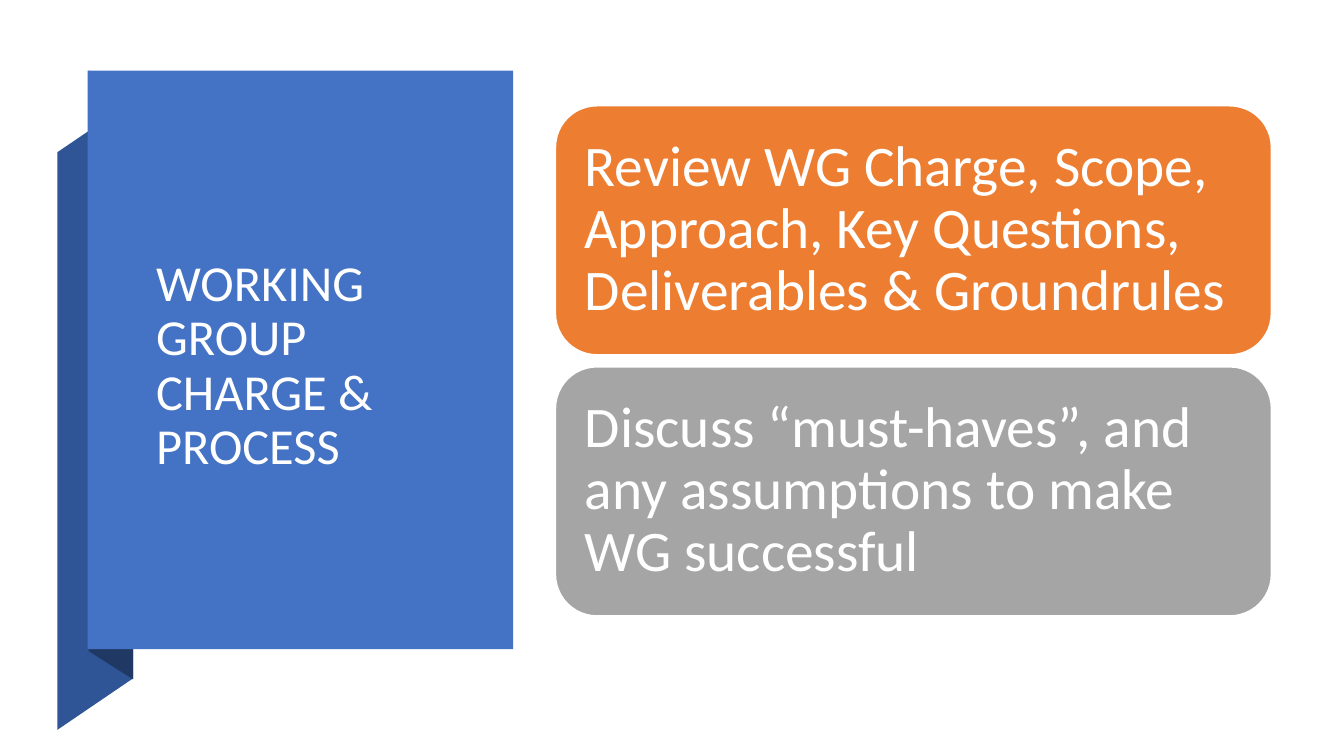
from dataclasses import dataclass

from pptx import Presentation
from pptx.dml.color import RGBColor
from pptx.enum.shapes import MSO_SHAPE as Preset
from pptx.enum.text import MSO_ANCHOR as Anchor, PP_ALIGN as Align
from pptx.util import Inches, Pt


@dataclass(frozen=True)
class Theme:
    font: str = "Calibri"
    title_size: int = 36
    card_size: int = 41
    white: str = "FFFFFF"
    panel: str = "4472C4"
    ribbon: str = "2F5597"
    fold: str = "203864"
    orange: str = "ED7D31"
    gray: str = "A5A5A5"


def write_text(frame, text, *, font, size, color, inset=(0.1, 0.05), space_after=0):
    frame.word_wrap = True
    frame.vertical_anchor = Anchor.MIDDLE
    frame.margin_left = frame.margin_right = Inches(inset[0])
    frame.margin_top = frame.margin_bottom = Inches(inset[1])
    para = frame.paragraphs[0]
    para.alignment = Align.LEFT
    para.line_spacing = 0.9
    para.space_after = Pt(space_after)
    span = para.add_run()
    span.text = text
    span.font.name = font
    span.font.size = Pt(size)
    span.font.color.rgb = RGBColor.from_string(color)


class Painter:
    def __init__(self, page, theme):
        self.page = page
        self.theme = theme

    def paint(self, shape, fill, line=None):
        shape.shadow.inherit = False
        shape.fill.solid()
        shape.fill.fore_color.rgb = RGBColor.from_string(fill)
        if line:
            shape.line.color.rgb = RGBColor.from_string(line)
            shape.line.width = Pt(1)
        else:
            shape.line.fill.background()

    def polygon(self, points, fill):
        corners = [(Inches(x), Inches(y)) for x, y in points]
        builder = self.page.shapes.build_freeform(*corners[0], scale=1.0)
        builder.add_line_segments(corners[1:], close=True)
        self.paint(builder.convert_to_shape(), fill)

    def box(self, preset, place, fill, line=None):
        shape = self.page.shapes.add_shape(preset, *map(Inches, place))
        self.paint(shape, fill, line)
        return shape

    def title(self, text, place):
        box = self.page.shapes.add_textbox(*map(Inches, place))
        write_text(box.text_frame, text, font=self.theme.font,
                   size=self.theme.title_size, color=self.theme.white)

    def card(self, text, place, fill):
        box = self.box(Preset.ROUNDED_RECTANGLE, place, fill, self.theme.white)
        write_text(box.text_frame, text, font=self.theme.font,
                   size=self.theme.card_size, color=self.theme.white,
                   inset=(0.17, 0.17), space_after=14)


def main():
    deck = Presentation()
    deck.slide_width, deck.slide_height = Inches(13.33), Inches(7.5)
    theme = Theme()
    painter = Painter(deck.slides.add_slide(deck.slide_layouts[6]), theme)

    painter.polygon([(0.57, 7.24), (1.32, 6.73), (1.32, 1), (0.57, 1.51)], theme.ribbon)
    painter.polygon([(0.88, 6.46), (1.32, 6.74), (1.32, 0.99), (0.88, 0.7)], theme.fold)
    painter.box(Preset.RECTANGLE, (0.87, 0.7, 4.22, 5.74), theme.panel)
    painter.title("WORKING GROUP CHARGE & PROCESS", (1.45, 1.67, 3.01, 3.94))

    cards = [
        ("Review WG Charge, Scope, Approach, Key Questions, Deliverables & Groundrules",
         theme.orange),
        ("Discuss “must-haves”, and any assumptions to make WG successful", theme.gray),
    ]
    top, height, gap = 1.05, 2.47, 0.12
    for index, (text, fill) in enumerate(cards):
        painter.card(text, (5.51, top + index * (height + gap), 7.1, height), fill)

    deck.save("out.pptx")


if __name__ == "__main__":
    main()
